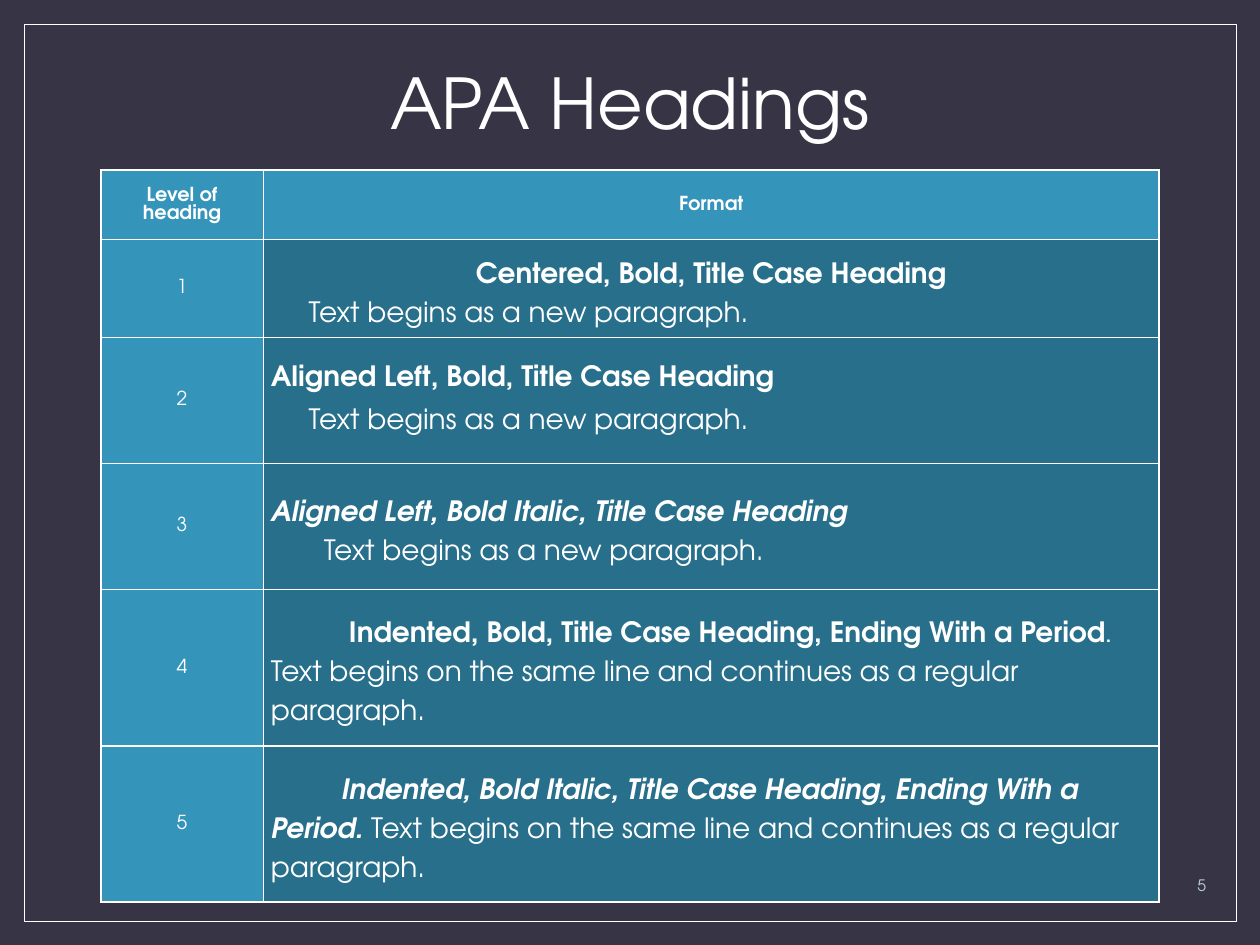
from dataclasses import dataclass

from lxml import etree
from pptx import Presentation
from pptx.dml.color import RGBColor
from pptx.enum.shapes import MSO_SHAPE
from pptx.enum.text import MSO_ANCHOR, PP_ALIGN
from pptx.oxml.ns import qn
from pptx.util import Inches, Pt

CENTER, LEFT, RIGHT = PP_ALIGN.CENTER, PP_ALIGN.LEFT, PP_ALIGN.RIGHT
MIDDLE, BOTTOM = MSO_ANCHOR.MIDDLE, MSO_ANCHOR.BOTTOM
RECTANGLE = MSO_SHAPE.RECTANGLE

FONT = "TeX Gyre Adventor"
WHITE, NAVY, PALE = "FFFFFF", "373545", "BCD0E0"
BLUE, TEAL = "3494BA", "276F8B"
COLUMN_WIDTHS = (1.29, 7.11)
ROW_HEIGHTS = (0.55, 0.78, 1, 1, 1.24, 1.24)
WIDE = Pt(22.3)  # line pitch of the loosely set cells


@dataclass
class Span:
    text: str
    size: float = 16
    bold: bool = False
    italic: bool = False


@dataclass
class Para:
    spans: list[Span]
    align: PP_ALIGN = LEFT
    spacing: float | Pt = 1.0
    indent: float = 0
    before: float = 0


def rgb(value: str) -> RGBColor:
    return RGBColor.from_string(value)


def write(frame, paras: list[Para], color: str = WHITE) -> None:
    frame.word_wrap = True
    frame.text = "\n".join("" for _ in paras)
    for paragraph, para in zip(frame.paragraphs, paras):
        paragraph.alignment = para.align
        paragraph.line_spacing = para.spacing
        paragraph.space_before = Pt(para.before)
        if para.indent:
            properties = paragraph._p.get_or_add_pPr()
            properties.set("marL", "0")
            properties.set("indent", str(Inches(para.indent)))
        for span in para.spans:
            run = paragraph.add_run()
            run.text = span.text
            font = run.font
            font.name, font.size = FONT, Pt(span.size)
            font.bold, font.italic = span.bold, span.italic
            font.color.rgb = rgb(color)


def add_label(page, box: tuple, para: Para, anchor: MSO_ANCHOR, color: str) -> None:
    frame = page.shapes.add_textbox(*map(Inches, box)).text_frame
    frame.vertical_anchor = anchor
    write(frame, [para], color)


def set_borders(cell) -> None:
    properties = cell._tc.get_or_add_tcPr()
    for position, side in enumerate(("a:lnL", "a:lnR", "a:lnT", "a:lnB")):
        line = etree.Element(qn(side), w=str(Pt(1)))
        fill = etree.SubElement(line, qn("a:solidFill"))
        etree.SubElement(fill, qn("a:srgbClr"), val=WHITE)
        properties.insert(position, line)


def fill_cell(cell, paras: list[Para], color: str) -> None:
    cell.fill.solid()
    cell.fill.fore_color.rgb = rgb(color)
    cell.vertical_anchor = MIDDLE
    cell.margin_left = cell.margin_right = Inches(0.06)
    cell.margin_top = cell.margin_bottom = Inches(0.03)
    write(cell.text_frame, paras)
    set_borders(cell)


def centered(text: str, bold: bool = False) -> list[Para]:
    return [Para([Span(text, 11, bold)], CENTER)]


NEW_PARAGRAPH = Span("Text begins as a new paragraph.")
SAME_LINE = "Text begins on the same line and continues as a regular paragraph."
FORMATS = [
    [Para([Span("Centered, Bold, Title Case Heading", bold=True)], CENTER, WIDE),
     Para([NEW_PARAGRAPH], spacing=WIDE, indent=0.3)],
    [Para([Span("Aligned Left, Bold, Title Case Heading", bold=True)]),
     Para([NEW_PARAGRAPH], indent=0.3, before=10)],
    [Para([Span("Aligned Left, Bold Italic, Title Case Heading", bold=True, italic=True)],
          spacing=WIDE),
     Para([NEW_PARAGRAPH], spacing=WIDE, indent=0.42)],
    # The no-break space keeps "Period. Text" together on the second line
    [Para([Span("Indented, Bold, Title Case Heading, Ending With a Period", bold=True),
           Span(".", 11, True), Span(" " + SAME_LINE)], spacing=WIDE, indent=0.62)],
    [Para([Span("Indented, Bold Italic, Title Case Heading, Ending With a Period.",
                bold=True, italic=True),
           Span(" " + SAME_LINE)], spacing=WIDE, indent=0.56)],
]

deck = Presentation()
deck.slide_width, deck.slide_height = Inches(10), Inches(7.5)
page = deck.slides.add_slide(deck.slide_layouts[6])
page.background.fill.solid()
page.background.fill.fore_color.rgb = rgb(NAVY)

# Thin frame around the page
border = page.shapes.add_shape(RECTANGLE, *map(Inches, (0.19, 0.19, 9.62, 7.12)))
border.shadow.inherit = False
border.fill.background()
border.line.color.rgb = rgb(WHITE)
border.line.width = Pt(0.5)

# Title and page number
add_label(page, (0.8, 0.36, 8.4, 0.98),
          Para([Span("APA Headings", 40)], CENTER, 0.9), MIDDLE, WHITE)
add_label(page, (8.47, 6.85, 1.2, 0.3), Para([Span("5", 9)], RIGHT), BOTTOM, PALE)

# Table of heading levels
table = page.shapes.add_table(
    len(ROW_HEIGHTS), len(COLUMN_WIDTHS), Inches(0.8), Inches(1.35),
    Inches(sum(COLUMN_WIDTHS)), Inches(sum(ROW_HEIGHTS))).table
for column, width in zip(table.columns, COLUMN_WIDTHS):
    column.width = Inches(width)
for row, height in zip(table.rows, ROW_HEIGHTS):
    row.height = Inches(height)

for index, heading in enumerate(("Level of heading", "Format")):
    fill_cell(table.cell(0, index), centered(heading, True), BLUE)
for level, paras in enumerate(FORMATS, start=1):
    fill_cell(table.cell(level, 0), centered(str(level)), BLUE)
    fill_cell(table.cell(level, 1), paras, TEAL)

deck.save("out.pptx")
